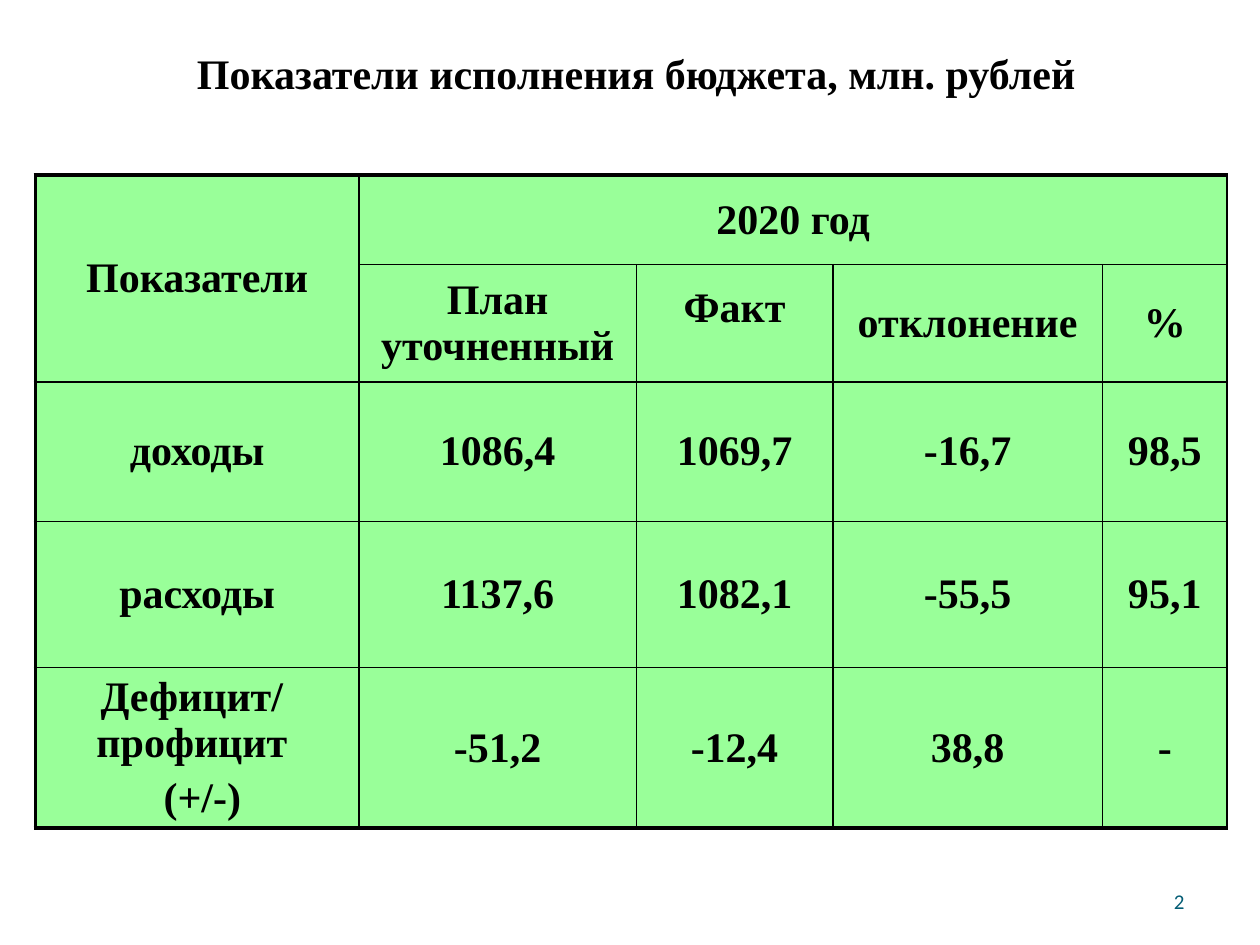
from lxml import etree
from pptx import Presentation
from pptx import util as u
from pptx.dml.color import RGBColor
from pptx.enum import text
from pptx.oxml.ns import qn

COLORS = {"ink": "000000", "cell": "99FF99", "number": "045D75"}
COLUMNS = [2.57, 2.2, 1.56, 2.14, 0.99]
ROWS = [0.71, 0.93, 1.11, 1.16, 1.27]
THICK, THIN = 2.25, 1
BUDGET = [
    ["Показатели", "2020 год", "", "", ""],
    ["", "План уточненный", "Факт", "отклонение", "%"],
    ["доходы", "1086,4", "1069,7", "-16,7", "98,5"],
    ["расходы", "1137,6", "1082,1", "-55,5", "95,1"],
    ["Дефицит/ \vпрофицит \n (+/-)", "-51,2", "-12,4", "38,8", "-"],
]


def format_text(frame, align, size=24, name="Times New Roman", color="ink", bold=True):
    for para in frame.paragraphs:
        para.alignment = align
        para.font.size = u.Pt(size)
        para.font.name = name
        para.font.bold = bold
        para.font.color.rgb = RGBColor.from_string(COLORS[color])


def add_borders(cell, widths):
    """Draw the left, right, top and bottom lines, with widths in points."""
    properties = cell._tc.get_or_add_tcPr()
    for position, (side, width) in enumerate(zip("LRTB", widths)):
        line = etree.Element(qn(f"a:ln{side}"), w=str(u.Pt(width)))
        fill = etree.SubElement(line, qn("a:solidFill"))
        etree.SubElement(fill, qn("a:srgbClr"), val=COLORS["ink"])
        properties.insert(position, line)


deck = Presentation()
deck.slide_width, deck.slide_height = u.Inches(10), u.Inches(7.5)
page = deck.slides.add_slide(deck.slide_layouts[5])

title = page.shapes.title
title.left, title.top = u.Inches(0.55), u.Inches(0)
title.width, title.height = u.Inches(9), u.Inches(1.15)
title.text_frame.text = "Показатели исполнения бюджета, млн. рублей"
title.text_frame.vertical_anchor = text.MSO_ANCHOR.MIDDLE
format_text(title.text_frame, text.PP_ALIGN.CENTER)

table = page.shapes.add_table(
    len(ROWS), len(COLUMNS), u.Inches(0.28), u.Inches(1.39),
    u.Inches(sum(COLUMNS)), u.Inches(sum(ROWS))).table
for column, width in zip(table.columns, COLUMNS):
    column.width = u.Inches(width)
for row, height in zip(table.rows, ROWS):
    row.height = u.Inches(height)

last = len(ROWS) - 1
for r, values in enumerate(BUDGET):
    for c, value in enumerate(values):
        cell = table.cell(r, c)
        cell.text = value
        cell.fill.solid()
        cell.fill.fore_color.rgb = RGBColor.from_string(COLORS["cell"])
        cell.vertical_anchor = text.MSO_ANCHOR.MIDDLE
        format_text(cell.text_frame, text.PP_ALIGN.CENTER)
        add_borders(cell, [THICK if c == 0 else THIN, THIN,
                           THICK if r == 0 else THIN,
                           THICK if r == last else THIN])

table.cell(0, 0).merge(table.cell(1, 0))
table.cell(0, 1).merge(table.cell(0, 4))
fact = table.cell(1, 2)
fact.vertical_anchor = text.MSO_ANCHOR.BOTTOM
fact.margin_bottom = u.Inches(0.4)
balance = table.cell(last, 0)
balance.vertical_anchor = text.MSO_ANCHOR.TOP
balance.text_frame.paragraphs[1].space_before = u.Pt(4.8)

number = page.shapes.add_textbox(u.Inches(7.17), u.Inches(6.95), u.Inches(2.33), u.Inches(0.4))
number.text_frame.word_wrap = True
number.text_frame.vertical_anchor = text.MSO_ANCHOR.MIDDLE
number.text_frame.text = "2"
format_text(number.text_frame, text.PP_ALIGN.RIGHT, 12, "Calibri", "number", False)

deck.save("out.pptx")
